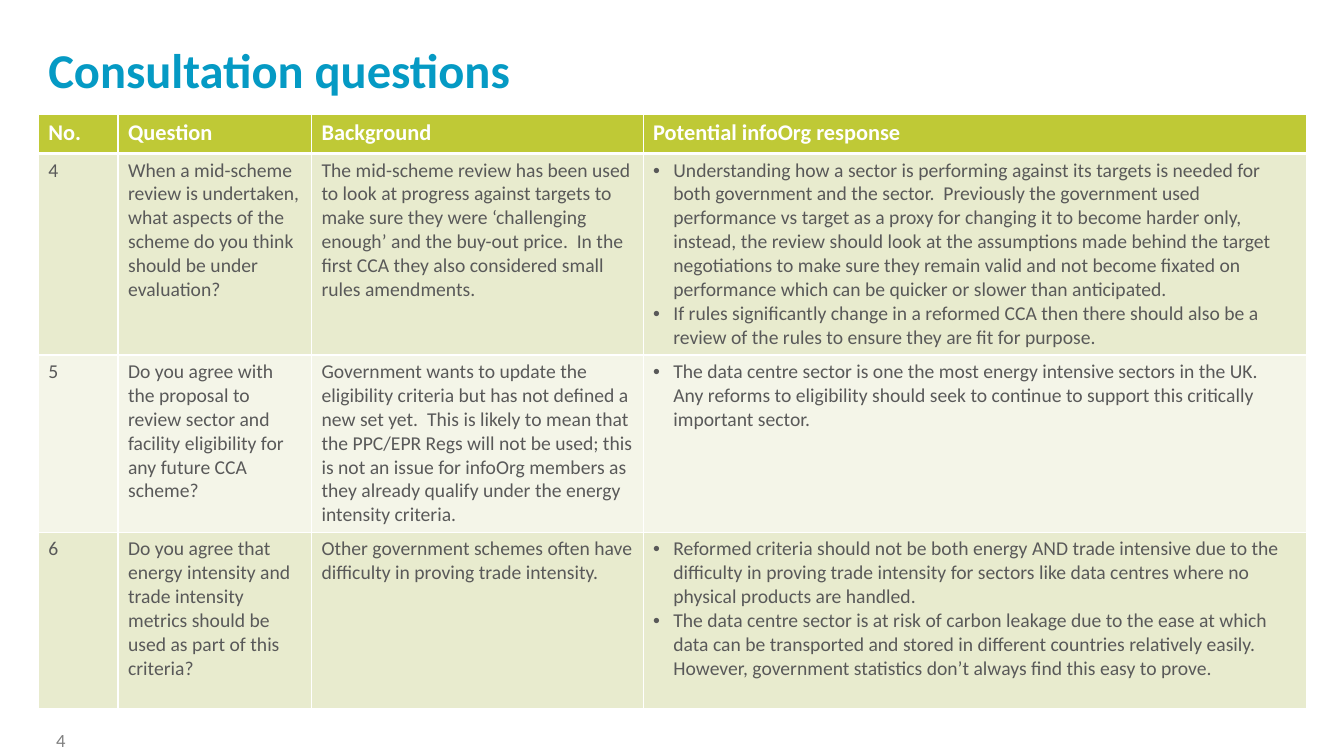
import pptx
import pptx.dml.color
import pptx.enum.text
import pptx.oxml
import pptx.oxml.ns
import pptx.util

Pt = pptx.util.Pt
RGBColor = pptx.dml.color.RGBColor

TITLE_BLUE = RGBColor(0x05, 0x9A, 0xC4)
HEADER_GREEN = RGBColor(0xBF, 0xC9, 0x36)
BAND_DARK = RGBColor(0xE8, 0xEB, 0xCE)
BAND_LIGHT = RGBColor(0xF4, 0xF5, 0xE8)
WHITE = RGBColor(0xFF, 0xFF, 0xFF)
TEXT_GREY = RGBColor(0x59, 0x59, 0x59)
NUMBER_GREY = RGBColor(0x80, 0x80, 0x80)

FONT = "Calibri"
BULLET_INDENT = Pt(14.4)
COLUMN_WIDTHS = [56.9, 138.2, 236.9, 473.8]
ROW_HEIGHTS = [28, 144, 126.5, 126]

# Each cell is a list of paragraphs
ROWS = [
    [["No."], ["Question"], ["Background"], ["Potential infoOrg response"]],
    [
        ["4"],
        ["When a mid-scheme review is undertaken, what aspects of the scheme do you think "
         "should be under evaluation?"],
        ["The mid-scheme review has been used to look at progress against targets to make sure "
         "they were ‘challenging enough’ and the buy-out price.  In the first CCA they also "
         "considered small rules amendments."],
        ["Understanding how a sector is performing against its targets is needed for both "
         "government and the sector.  Previously the government used performance vs target as a "
         "proxy for changing it to become harder only, instead, the review should look at the "
         "assumptions made behind the target negotiations to make sure they remain valid and not "
         "become fixated on performance which can be quicker or slower than anticipated.",
         "If rules significantly change in a reformed CCA then there should also be a review of "
         "the rules to ensure they are fit for purpose."],
    ],
    [
        ["5"],
        ["Do you agree with the proposal to review sector and facility eligibility for any "
         "future CCA scheme?"],
        ["Government wants to update the eligibility criteria but has not defined a new set yet.  "
         "This is likely to mean that the PPC/EPR Regs will not be used; this is not an issue for "
         "infoOrg members as they already qualify under the energy intensity criteria."],
        ["The data centre sector is one the most energy intensive sectors in the UK.  Any reforms "
         "to eligibility should seek to continue to support this critically important sector."],
    ],
    [
        ["6"],
        ["Do you agree that energy intensity and trade intensity metrics should be used as part "
         "of this criteria?"],
        ["Other government schemes often have difficulty in proving trade intensity."],
        ["Reformed criteria should not be both energy AND trade intensive due to the difficulty "
         "in proving trade intensity for sectors like data centres where no physical products "
         "are handled.",
         "The data centre sector is at risk of carbon leakage due to the ease at which data can "
         "be transported and stored in different countries relatively easily.  However, "
         "government statistics don’t always find this easy to prove."],
    ],
]


def style_text(p, size, color, bold=False):
    for r in p.runs:
        r.font.name = FONT
        r.font.size = Pt(size)
        r.font.bold = bold
        r.font.color.rgb = color


def add_border(cell, side, width):
    tc_pr = cell._tc.get_or_add_tcPr()
    tc_pr.append(pptx.oxml.parse_xml(
        f'<a:{side} {pptx.oxml.ns.nsdecls("a")} w="{Pt(width)}">'
        f'<a:solidFill><a:srgbClr val="{WHITE}"/></a:solidFill></a:{side}>'))


prs = pptx.Presentation()
prs.slide_width, prs.slide_height = Pt(960), Pt(540)
s = prs.slides.add_slide(prs.slide_layouts[6])

# Title
tf = s.shapes.add_textbox(Pt(27.4), Pt(12.2), Pt(864), Pt(74.2)).text_frame
tf.word_wrap = True
tf.vertical_anchor = pptx.enum.text.MSO_ANCHOR.MIDDLE
tf.text = "Consultation questions"
style_text(tf.paragraphs[0], 34.7, TITLE_BLUE, bold=True)

# Slide number
tf = s.shapes.add_textbox(Pt(33.1), Pt(517), Pt(40.3), Pt(28.8)).text_frame
tf.word_wrap = True
tf.text = "4"
style_text(tf.paragraphs[0], 13.3, NUMBER_GREY)

# Question table
table = s.shapes.add_table(len(ROWS), len(COLUMN_WIDTHS), Pt(27.4), Pt(81.6),
                           Pt(sum(COLUMN_WIDTHS)), Pt(sum(ROW_HEIGHTS))).table
for column, width in zip(table.columns, COLUMN_WIDTHS):
    column.width = Pt(width)

for i, (row, height) in enumerate(zip(ROWS, ROW_HEIGHTS)):
    table.rows[i].height = Pt(height)
    is_header = i == 0
    fill = HEADER_GREEN if is_header else BAND_DARK if i % 2 else BAND_LIGHT
    for j, paragraphs in enumerate(row):
        cell = table.cell(i, j)
        for side in ("lnL", "lnR", "lnT", "lnB"):
            under_header = (i, side) in ((0, "lnB"), (1, "lnT"))
            add_border(cell, side, 3 if under_header else 1)
        cell.fill.solid()
        cell.fill.fore_color.rgb = fill

        cell.text_frame.text = "\n".join(paragraphs)
        for p in cell.text_frame.paragraphs:
            if j == 3 and not is_header:
                p_pr = p._p.get_or_add_pPr()
                p_pr.set("marL", str(BULLET_INDENT))
                p_pr.set("indent", str(-BULLET_INDENT))
                p_pr.append(pptx.oxml.parse_xml(
                    f'<a:buFont {pptx.oxml.ns.nsdecls("a")} typeface="Arial"/>'))
                p_pr.append(pptx.oxml.parse_xml(
                    f'<a:buChar {pptx.oxml.ns.nsdecls("a")} char="•"/>'))
            if is_header:
                style_text(p, 16, WHITE, bold=True)
            else:
                style_text(p, 14, TEXT_GREY)

prs.save("out.pptx")
